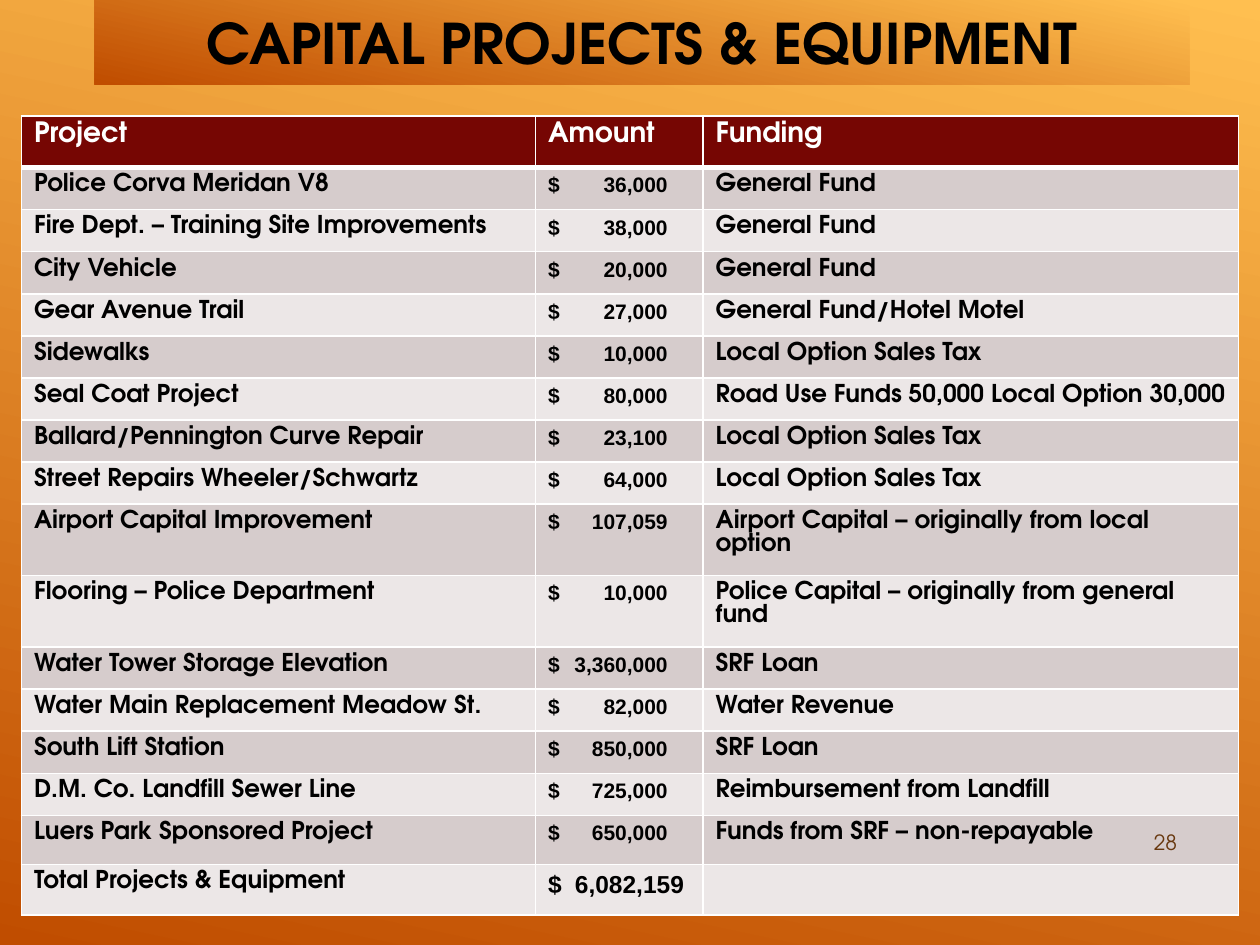
from lxml.etree import SubElement
from pptx import Presentation
from pptx.dml.color import RGBColor
from pptx.enum.text import MSO_ANCHOR, PP_ALIGN
from pptx.oxml.ns import qn
from pptx.util import Inches, Pt

FONT = "TeX Gyre Adventor"
COLUMNS = [4.08, 1.33, 4.25]
HEIGHTS = [0.41] + [0.33] * 14 + [0.39] * 2
HEADER = ("Project", "Amount", "Funding")
PROJECTS = [
    ("Police Corva Meridan V8", "36,000", "General Fund"),
    ("Fire Dept. – Training Site Improvements", "38,000", "General Fund"),
    ("City Vehicle", "20,000", "General Fund"),
    ("Gear Avenue Trail", "27,000", "General Fund/Hotel Motel"),
    ("Sidewalks", "10,000", "Local Option Sales Tax"),
    ("Seal Coat Project", "80,000", "Road Use Funds 50,000 Local Option 30,000"),
    ("Ballard/Pennington Curve Repair", "23,100", "Local Option Sales Tax"),
    ("Street Repairs Wheeler/Schwartz", "64,000", "Local Option Sales Tax"),
    ("Airport Capital Improvement", "107,059", "Airport Capital – originally from local option"),
    ("Flooring – Police Department", "10,000", "Police Capital – originally from general fund"),
    ("Water Tower Storage Elevation", "3,360,000", "SRF Loan"),
    ("Water Main Replacement Meadow St.", "82,000", "Water Revenue"),
    ("South Lift Station", "850,000", "SRF Loan"),
    ("D.M. Co. Landfill Sewer Line", "725,000", "Reimbursement from Landfill"),
    ("Luers Park Sponsored Project", "650,000", "Funds from SRF – non-repayable"),
]
TOTAL = ("Total Projects & Equipment", "6,082,159", "")


def rgb(color):
    """Turn a hex string into a colour."""
    return RGBColor.from_string(color)


def fill_gradient(fill):
    """Apply the orange gradient that runs down to the left."""
    fill.gradient()
    fill.gradient_angle = 360 - 102
    for stop, color in zip(fill.gradient_stops, ("FFBF50", "C04D00")):
        stop.color.rgb = rgb(color)


def write(tf, text, size, color, font=FONT, bold=True, align=PP_ALIGN.LEFT):
    """Write one paragraph, sized on its run so that table rows fit, and return it."""
    p = tf.paragraphs[0]
    p.alignment = align
    r = p.add_run()
    r.text = text
    p.font.name = font
    p.font.bold = bold
    p.font.color.rgb = rgb(color)
    r.font.size = Pt(size)
    return p


def add_text(slide, box, text, size, color, anchor, **style):
    """Add a text box with one paragraph and return it."""
    sp = slide.shapes.add_textbox(*map(Inches, box))
    tf = sp.text_frame
    tf.word_wrap = True
    tf.vertical_anchor = anchor
    write(tf, text, size, color, **style)
    return sp


def add_right_tab(p, position):
    """Give a paragraph a right-aligned tab stop."""
    tabs = SubElement(p._p.get_or_add_pPr(), qn("a:tabLst"))
    SubElement(tabs, qn("a:tab"), pos=str(Inches(position)), algn="r")
    p._p.pPr.insert_element_before(tabs, "a:defRPr", "a:extLst")


def style_cell(cell, color, top=1, bottom=1):
    """Set the fill and white borders of a cell."""
    tcPr = cell._tc.get_or_add_tcPr()
    for side, width in (("L", 1), ("R", 1), ("T", top), ("B", bottom)):
        ln = SubElement(tcPr, qn(f"a:ln{side}"), w=str(Pt(width)))
        SubElement(SubElement(ln, qn("a:solidFill")), qn("a:srgbClr"), val="FFFFFF")
    cell.fill.solid()
    cell.fill.fore_color.rgb = rgb(color)


def write_amount(cell, amount, size, tab):
    """Write a dollar sign and an amount aligned at a tab stop."""
    p = write(cell.text_frame, f"$\t{amount}", size, "000000", font="Arial", align=PP_ALIGN.JUSTIFY)
    add_right_tab(p, tab)


def add_project_table(slide):
    """Add the table of projects, amounts and funding."""
    rows = [HEADER, *PROJECTS, TOTAL]
    box = (0.17, 0.92, sum(COLUMNS), sum(HEIGHTS))
    table = slide.shapes.add_table(len(rows), len(COLUMNS), *map(Inches, box)).table
    for column, width in zip(table.columns, COLUMNS):
        column.width = Inches(width)
    for i, (values, height) in enumerate(zip(rows, HEIGHTS)):
        table.rows[i].height = Inches(height)
        for j, value in enumerate(values):
            cell = table.cell(i, j)
            if i == 0:
                style_cell(cell, "760603", bottom=3)
                write(cell.text_frame, value, 16, "FFFFFF", align=PP_ALIGN.JUSTIFY if j == 1 else PP_ALIGN.LEFT)
                continue
            style_cell(cell, "D6CCCC" if i % 2 else "ECE7E7", top=3 if i == 1 else 1)
            if j == 1:
                size, tab = (14, 1.08) if values is TOTAL else (12, 0.95)
                write_amount(cell, value, size, tab)
            elif value:
                write(cell.text_frame, value, 14, "000000")


def main():
    """Build the slide and save it."""
    prs = Presentation()
    prs.slide_width, prs.slide_height = Inches(10), Inches(7.5)
    slide = prs.slides.add_slide(prs.slide_layouts[6])
    fill_gradient(slide.background.fill)
    title = add_text(slide, (0.75, 0, 8.69, 0.67), "CAPITAL PROJECTS & EQUIPMENT", 32, "000000",
                     MSO_ANCHOR.MIDDLE, align=PP_ALIGN.CENTER)
    fill_gradient(title.fill)
    add_project_table(slide)
    add_text(slide, (8.5, 6.1, 0.94, 0.73), "28", 12, "68380F", MSO_ANCHOR.BOTTOM,
             bold=False, align=PP_ALIGN.RIGHT)
    prs.save("out.pptx")


if __name__ == "__main__":
    main()
